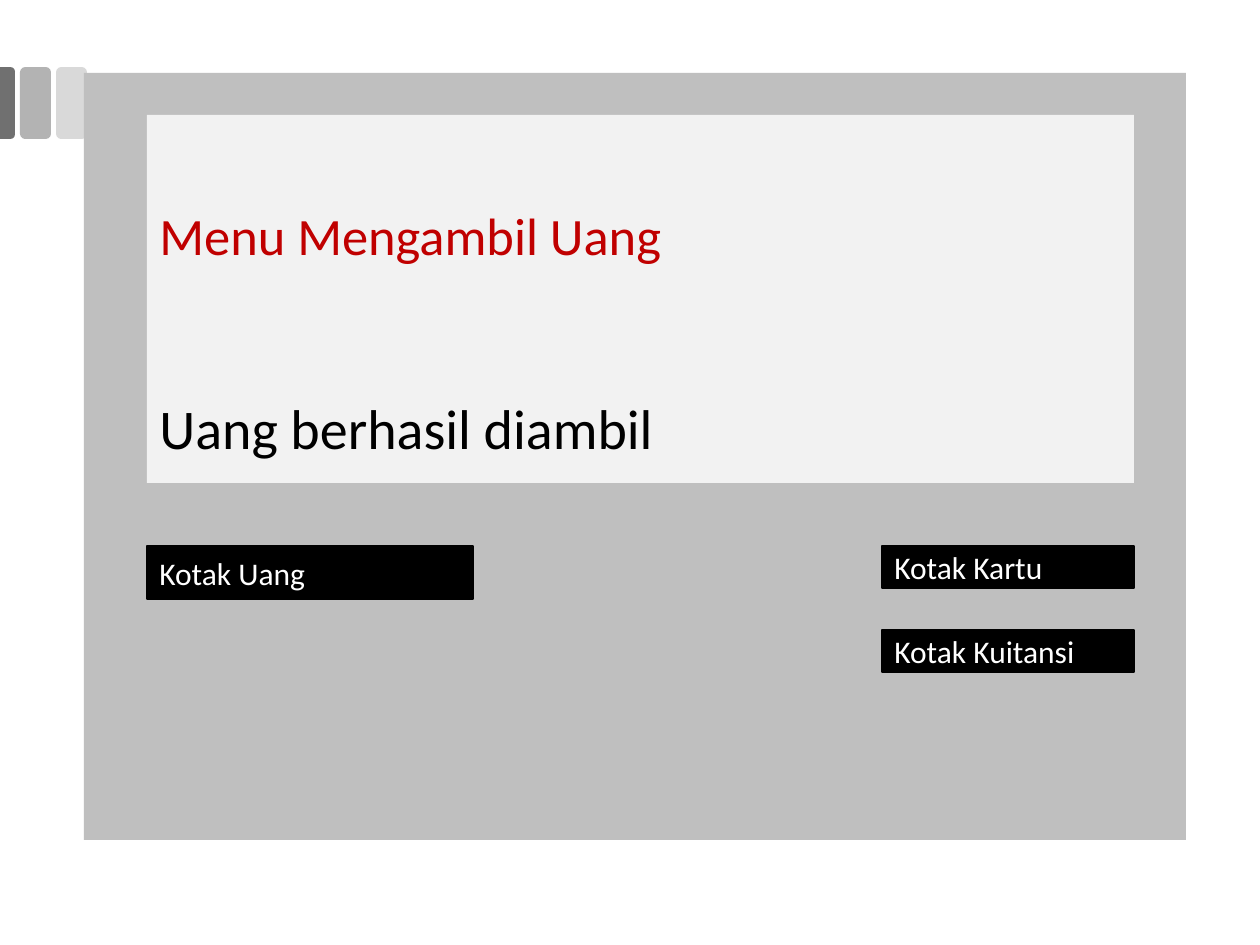
from pptx import Presentation
from pptx.dml.color import RGBColor
from pptx.enum.shapes import MSO_SHAPE
from pptx.enum.text import MSO_ANCHOR, PP_ALIGN
from pptx.util import Emu, Pt

PX = 914400 / 126
WHITE = RGBColor(0xFF, 0xFF, 0xFF)
BLACK = RGBColor(0, 0, 0)
RED = RGBColor(0xC0, 0, 0)
CASE_GREY = RGBColor(0xBF, 0xBF, 0xBF)
SCREEN_GREY = RGBColor(0xF2, 0xF2, 0xF2)
TAB_DARK = RGBColor(0x70, 0x70, 0x70)
TAB_MIDDLE = RGBColor(0xB3, 0xB3, 0xB3)
TAB_LIGHT = RGBColor(0xD9, 0xD9, 0xD9)


def px(length):
    return Emu(round(length * PX))


def add_block(page, box, fill, kind=MSO_SHAPE.RECTANGLE, line=None):
    shape = page.shapes.add_shape(kind, *map(px, box))
    shape.shadow.inherit = False
    shape.fill.solid()
    shape.fill.fore_color.rgb = fill
    if line is None:
        shape.line.fill.background()
    else:
        shape.line.color.rgb = line
        shape.line.width = Pt(1)
    return shape


def write(para, text, size, color):
    para.text = text
    para.alignment = PP_ALIGN.LEFT
    para.font.name = "Calibri"
    para.font.size = Pt(size)
    para.font.color.rgb = color


def add_tabs(page, left, top, width, height):
    """Three tabs running in from the left edge, the first one cut off by it."""
    gap, cut_width = 5, 16
    for index, color in ((2, TAB_LIGHT), (1, TAB_MIDDLE)):
        tab_left = left + cut_width + gap + (index - 1) * (width + gap)
        add_block(page, (tab_left, top, width, height), color,
                  MSO_SHAPE.ROUNDED_RECTANGLE)
    # The cut tab is turned so that its round corners face right
    turned_left = left + (cut_width - height) / 2
    turned_top = top + (height - cut_width) / 2
    cut_tab = add_block(page, (turned_left, turned_top, height, cut_width),
                        TAB_DARK, MSO_SHAPE.ROUND_2_SAME_RECTANGLE)
    cut_tab.adjustments[0] = 0.29
    cut_tab.rotation = 90


def add_screen(page, box):
    frame = add_block(page, box, SCREEN_GREY).text_frame
    frame.word_wrap = True
    frame.vertical_anchor = MSO_ANCHOR.BOTTOM
    frame.margin_bottom = px(22)
    write(frame.paragraphs[0], "Menu Mengambil Uang", 30, RED)
    message = frame.add_paragraph()
    write(message, "Uang berhasil diambil", 32, BLACK)
    message.space_before = Pt(73)


def add_slot(page, box, label):
    frame = add_block(page, box, BLACK, line=BLACK).text_frame
    frame.word_wrap = True
    frame.vertical_anchor = MSO_ANCHOR.MIDDLE
    write(frame.paragraphs[0], label, 18, WHITE)


def add_machine(page, left, top, width, height):
    add_block(page, (left, top, width, height), CASE_GREY)
    add_screen(page, (left + 63, top + 42, 987, 368))
    # Slots for money, card and receipt
    slots = (("Kotak Uang", 63, 473, 326, 53),
             ("Kotak Kartu", 798, 473, 252, 42),
             ("Kotak Kuitansi", 798, 557, 252, 42))
    for label, x, y, slot_width, slot_height in slots:
        add_slot(page, (left + x, top + y, slot_width, slot_height), label)


def main():
    deck = Presentation()
    deck.slide_width, deck.slide_height = px(1260), px(945)
    page = deck.slides.add_slide(deck.slide_layouts[6])
    add_tabs(page, -1, 67, 31, 72)
    add_machine(page, 84, 73, 1102, 767)
    deck.save("out.pptx")


if __name__ == "__main__":
    main()
